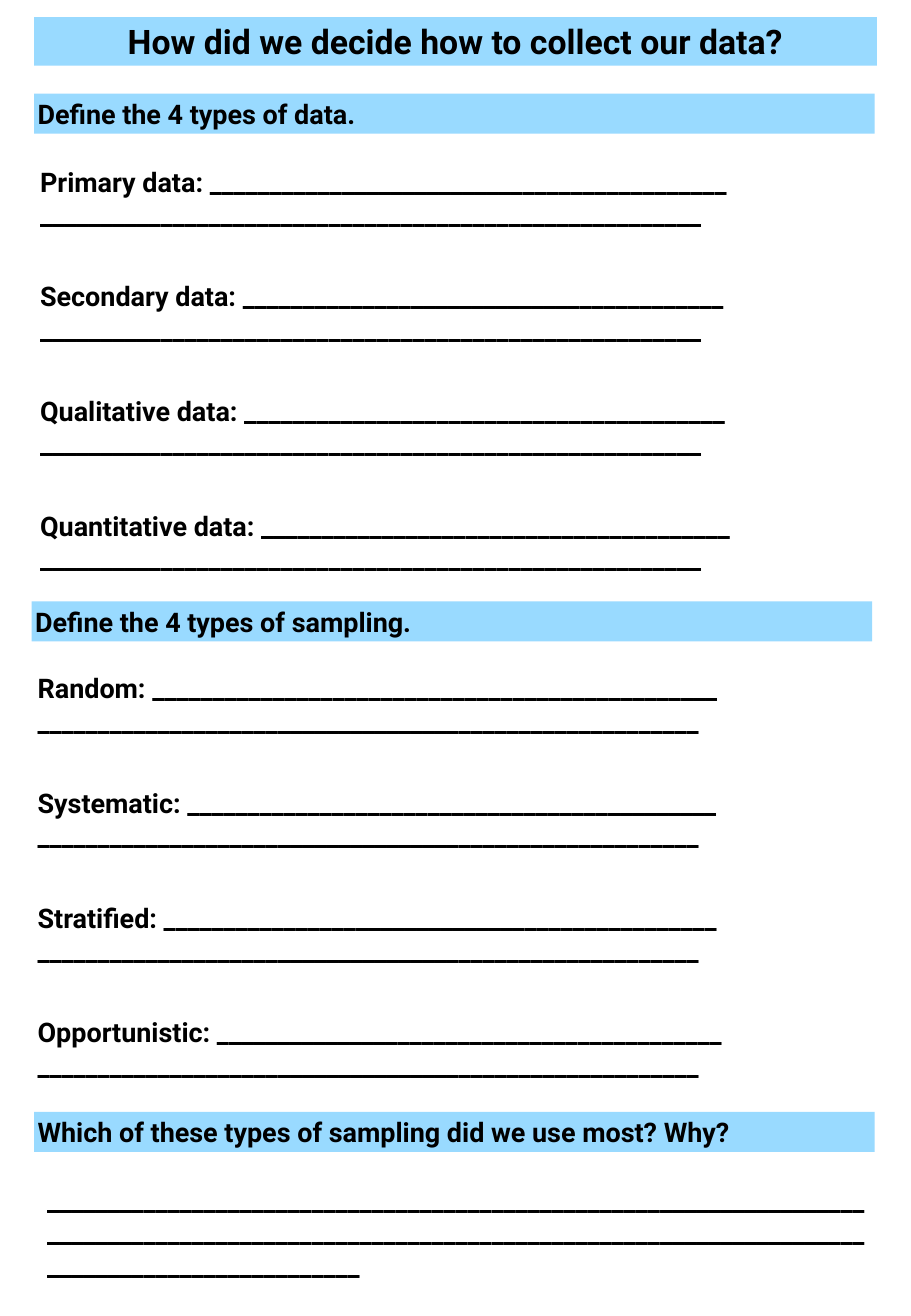
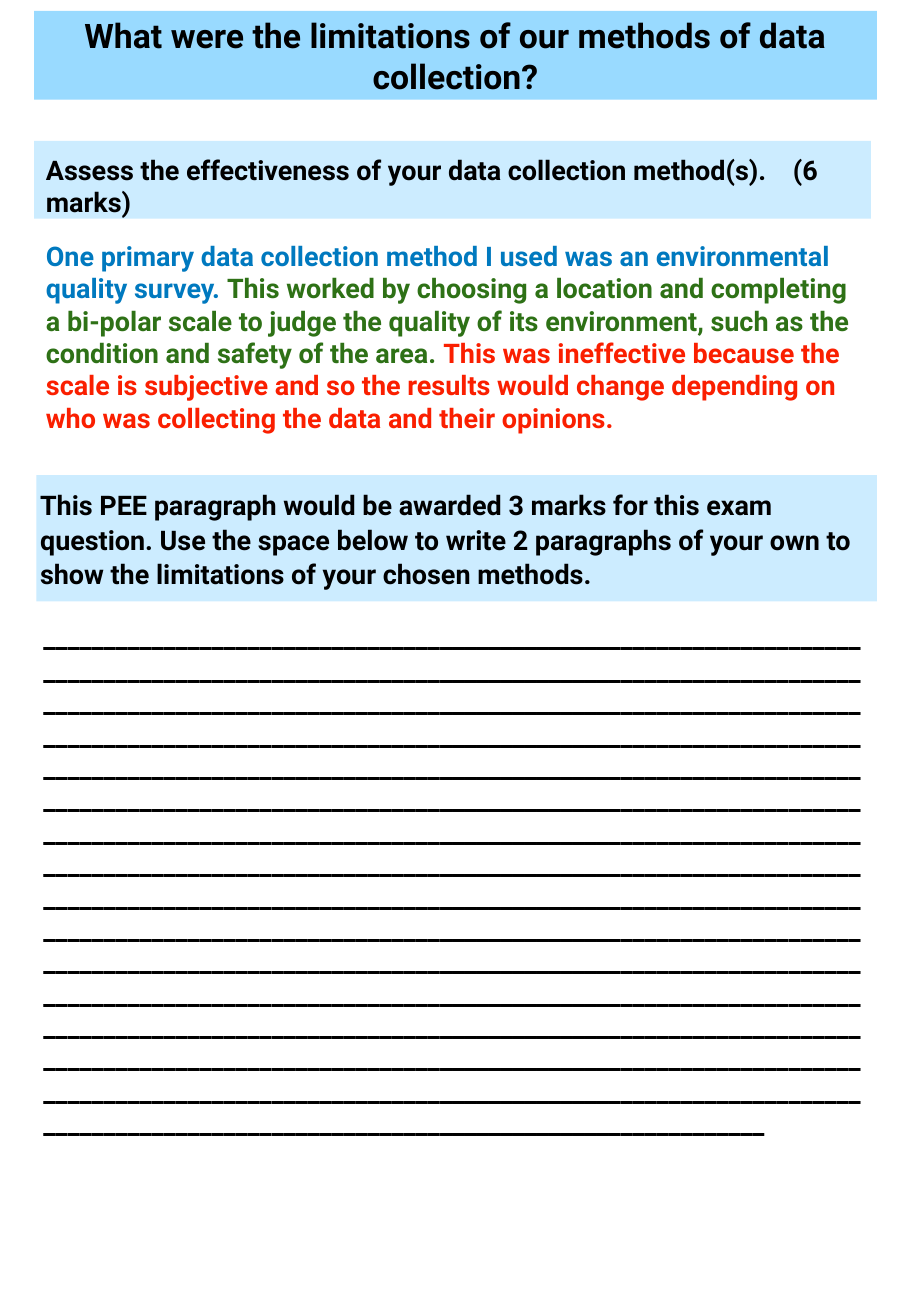
import pptx
import pptx.dml.color
import pptx.enum.shapes
import pptx.enum.text
import pptx.oxml
import pptx.util
from pptx.util import Inches

RGBColor = pptx.dml.color.RGBColor
ALIGN = pptx.enum.text.PP_ALIGN
ANCHOR = pptx.enum.text.MSO_ANCHOR

SKY = RGBColor(0x99, 0xDA, 0xFF)
PALE_SKY = RGBColor(0xCC, 0xEC, 0xFF)
BLACK = RGBColor(0, 0, 0)
POINT_BLUE = RGBColor(0x00, 0x79, 0xBF)
EVIDENCE_GREEN = RGBColor(0x2E, 0x71, 0x16)
EXPLAIN_RED = RGBColor(0xFA, 0x1F, 0x00)
FONT = "Roboto"

DATA_TYPES = [("Primary data", 43), ("Secondary data", 40),
              ("Qualitative data", 40), ("Quantitative data", 39)]
SAMPLING_TYPES = [("Random", 47), ("Systematic", 44),
                  ("Stratified", 46), ("Opportunistic", 42)]
SECOND_LINE = 55

MODEL_ANSWER = [
    ("One primary data collection method I used was an environmental quality survey. ",
     POINT_BLUE),
    ("This worked by choosing a location and completing a bi-polar scale to judge the "
     "quality of its environment, such as the condition and safety of the area. ",
     EVIDENCE_GREEN),
    ("This was ineffective because the scale is subjective and so the results would "
     "change depending on who was collecting the data and their opinions.",
     EXPLAIN_RED),
]


def apply(target, formats):
    for name, value in formats.items():
        setattr(target, name, value)


def set_frame(tf, inset, anchor=ANCHOR.TOP):
    apply(tf, {"word_wrap": True, "auto_size": pptx.enum.text.MSO_AUTO_SIZE.NONE,
               "vertical_anchor": anchor})
    apply(tf, dict.fromkeys(
        ("margin_left", "margin_top", "margin_right", "margin_bottom"), inset))


def write(p, runs, size=16, **formats):
    """Fill a paragraph with (text, colour) runs in the shared bold font."""
    apply(p, {"alignment": ALIGN.LEFT, **formats})
    for text, color in runs:
        r = p.add_run()
        r.text = text
        apply(r.font, {"name": FONT, "size": pptx.util.Pt(size), "bold": True})
        r.font.color.rgb = color


def fill_solid(sp, color):
    sp.fill.solid()
    sp.fill.fore_color.rgb = color
    sp.line.fill.background()


def add_title_slide(prs, text, top, height):
    s = prs.slides.add_slide(prs.slide_layouts[5])
    title = s.shapes.title
    apply(title, {"left": Inches(0.28), "top": Inches(top),
                  "width": Inches(6.94), "height": Inches(height)})
    fill_solid(title, SKY)
    set_frame(title.text_frame, Inches(0.03), ANCHOR.MIDDLE)
    write(title.text_frame.paragraphs[0], [(text, BLACK)], size=20,
          alignment=ALIGN.CENTER)
    return s


def add_band(s, text, at, color=SKY, inset=0.03, anchor=ANCHOR.MIDDLE, **formats):
    sp = s.shapes.add_shape(pptx.enum.shapes.MSO_SHAPE.RECTANGLE, *map(Inches, at))
    sp.shadow.inherit = False
    fill_solid(sp, color)
    set_frame(sp.text_frame, Inches(inset), anchor)
    p = sp.text_frame.paragraphs[0]
    write(p, [(text, BLACK)], **formats)
    return p


def add_text(s, paragraphs, at, inset=0.1, **formats):
    tf = s.shapes.add_textbox(*map(Inches, at)).text_frame
    set_frame(tf, Inches(inset))
    for i, runs in enumerate(paragraphs):
        p = tf.add_paragraph() if i else tf.paragraphs[0]
        write(p, runs, **formats)


def add_definitions(s, terms, left, top):
    """Terms, each followed by two ruled lines to write on."""
    paragraphs = [[(f"{term}: {'_' * count} {'_' * SECOND_LINE}", BLACK)]
                  for term, count in terms]
    add_text(s, paragraphs, (left, top, 6.92, 3.69), inset=0.04,
             space_before=pptx.util.Pt(29.5))


def add_answer_lines(s, count, at):
    add_text(s, [[("_" * count, BLACK)]], at)


def add_tab_stop(p, position):
    pPr = p._p.get_or_add_pPr()
    tabs = pptx.oxml.parse_xml(
        '<a:tabLst xmlns:a="http://schemas.openxmlformats.org/drawingml/2006/main">'
        f'<a:tab pos="{Inches(position)}" algn="l"/></a:tabLst>')
    pPr.append(tabs)


def build_collection_slide(prs):
    s = add_title_slide(prs, "How did we decide how to collect our data?", 0.14, 0.4)
    add_band(s, "Define the 4 types of data.", (0.28, 0.77, 6.92, 0.33))
    add_definitions(s, DATA_TYPES, 0.29, 1.32)
    add_band(s, "Define the 4 types of sampling.", (0.26, 4.95, 6.92, 0.33))
    add_definitions(s, SAMPLING_TYPES, 0.27, 5.49)
    add_band(s, "Which of these types of sampling did we use most? Why?",
             (0.28, 9.15, 6.92, 0.33))
    add_answer_lines(s, 162, (0.29, 9.64, 6.94, 0.91))


def build_limitations_slide(prs):
    s = add_title_slide(
        prs, "What were the limitations of our methods of data collection?", 0.09, 0.73)
    question = add_band(
        s, "Assess the effectiveness of your data collection method(s).\t(6 marks)",
        (0.28, 1.16, 6.89, 0.64), PALE_SKY, inset=0.1, anchor=ANCHOR.TOP)
    question.runs[0].font.language_id = None
    add_tab_stop(question, 6.15)
    add_text(s, [MODEL_ANSWER], (0.28, 1.87, 6.89, 1.99))
    add_band(s, "This PEE paragraph would be awarded 3 marks for this exam question. "
                "Use the space below to write 2 paragraphs of your own to show the "
                "limitations of your chosen methods.",
             (0.3, 3.91, 6.92, 1.04), PALE_SKY,
             line_spacing=1.07, space_after=pptx.util.Pt(8))
    add_answer_lines(s, 1080, (0.26, 5.01, 6.94, 5.49))


def main():
    prs = pptx.Presentation()
    apply(prs, {"slide_width": Inches(7.5), "slide_height": Inches(10.83)})
    build_collection_slide(prs)
    build_limitations_slide(prs)
    prs.save("out.pptx")


if __name__ == "__main__":
    main()
